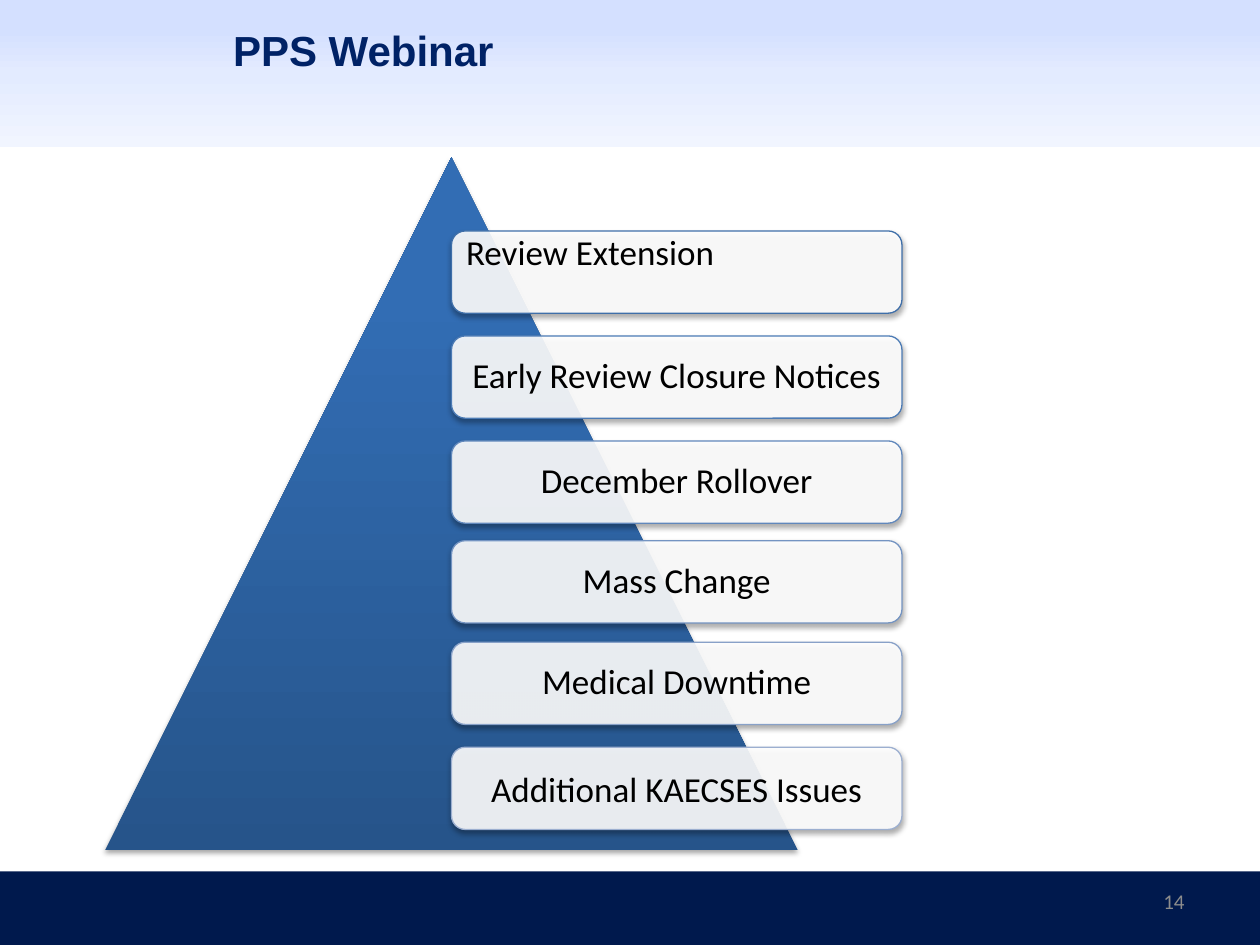
from dataclasses import dataclass

from lxml import etree
from pptx import Presentation
from pptx.dml.color import RGBColor
from pptx.enum.shapes import MSO_SHAPE
from pptx.enum.text import MSO_ANCHOR, PP_ALIGN
from pptx.oxml.ns import qn
from pptx.util import Pt

RECTANGLE = MSO_SHAPE.RECTANGLE
TRIANGLE = MSO_SHAPE.ISOSCELES_TRIANGLE
ROUNDED = MSO_SHAPE.ROUNDED_RECTANGLE
TOP, MIDDLE = MSO_ANCHOR.TOP, MSO_ANCHOR.MIDDLE
LEFT, CENTER, RIGHT = PP_ALIGN.LEFT, PP_ALIGN.CENTER, PP_ALIGN.RIGHT
TITLE_ONLY = 5


@dataclass(frozen=True)
class Theme:
    heading_font: str = "Arial"
    body_font: str = "Calibri"
    title_size: int = 24
    topic_size: int = 20
    number_size: int = 12
    title: str = "002266"
    text: str = "000000"
    number: str = "8C8C8C"
    footer: str = "00194D"
    card: str = "FFFFFF"
    shadow: str = "000000"
    header_stops: tuple = ((20, "D4E0FF"), (50, "E3EBFF"), (100, "F1F5FF"))
    pyramid_stops: tuple = ((0, "26548A"), (80, "326DB4"), (100, "306DB7"))


THEME = Theme()

# Topic, top of its card, outline colour
TOPICS = (
    ("Review Extension", 132, "3F6FA9"),
    ("Early Review Closure Notices", 192, "4C7BB5"),
    ("December Rollover", 252, "6188BC"),
    ("Mass Change", 309, "7494C2"),
    ("Medical Downtime", 367, "88A1C8"),
    ("Additional KAECSES Issues", 427, "9CAFD0"),
)
# The first topic sits at the top left of its card, the last has full line spacing
TOPIC_FORMATS = {
    0: {"frame": {"vertical_anchor": TOP, "margin_top": 0},
        "paragraph": {"alignment": LEFT}},
    len(TOPICS) - 1: {"paragraph": {"line_spacing": 1.0}},
}


def apply_format(target, values):
    for name, value in values.items():
        setattr(target, name, value)


def write_text(frame, text, frame_format, paragraph_format, font_format, color):
    apply_format(frame, {"word_wrap": True, **frame_format})
    paragraph = frame.paragraphs[0]
    apply_format(paragraph, paragraph_format)
    run = paragraph.add_run()
    run.text = text
    apply_format(run.font, font_format)
    run.font.color.rgb = RGBColor.from_string(color)


def add_plain_shape(slide, kind, box):
    shape = slide.shapes.add_shape(kind, *map(Pt, box))
    shape.shadow.inherit = False
    shape.line.fill.background()
    return shape


def fill_solid(shape, color):
    shape.fill.solid()
    shape.fill.fore_color.rgb = RGBColor.from_string(color)


def fill_gradient(shape, stops, angle):
    shape.fill.gradient()
    shape.fill.gradient_angle = angle
    stop_list = next(shape._element.spPr.iter(qn("a:gsLst")))
    for stop in list(stop_list):
        stop_list.remove(stop)
    for position, color in stops:
        stop = etree.SubElement(stop_list, qn("a:gs"), pos=str(position * 1000))
        etree.SubElement(stop, qn("a:srgbClr"), val=color)


def add_shadow(shape):
    effects = shape._element.spPr.find(qn("a:effectLst"))
    outer = etree.SubElement(
        effects, qn("a:outerShdw"), blurRad=str(Pt(3.1)), dist=str(Pt(1.8)),
        dir="5400000", rotWithShape="0")
    color = etree.SubElement(outer, qn("a:srgbClr"), val=THEME.shadow)
    etree.SubElement(color, qn("a:alpha"), val="35000")


def add_bands(slide, box):
    left, top, width, height = box
    header = add_plain_shape(slide, RECTANGLE, (left, top, width, 84))
    fill_gradient(header, THEME.header_stops, 270)
    footer = add_plain_shape(slide, RECTANGLE, (left, top + height - 42, width, 42))
    fill_solid(footer, THEME.footer)
    # Both bands lie behind the title
    for band in (header, footer):
        slide.shapes._spTree.insert(2, band._element)


def set_title(slide, box):
    title = slide.shapes.title
    apply_format(title, dict(zip(("left", "top", "width", "height"), map(Pt, box))))
    write_text(title.text_frame, "PPS Webinar", {"vertical_anchor": MIDDLE},
               {"alignment": LEFT},
               {"name": THEME.heading_font, "size": Pt(THEME.title_size), "bold": True},
               THEME.title)


def add_slide_number(slide, box):
    number = slide.shapes.add_textbox(*map(Pt, box))
    write_text(number.text_frame, "14", {"vertical_anchor": MIDDLE},
               {"alignment": RIGHT},
               {"name": THEME.body_font, "size": Pt(THEME.number_size)}, THEME.number)


def add_topic(slide, box, topic, outline, formats):
    card = add_plain_shape(slide, ROUNDED, box)
    fill_solid(card, THEME.card)
    opacity = next(card._element.spPr.iter(qn("a:srgbClr")))
    etree.SubElement(opacity, qn("a:alpha"), val="90000")
    card.line.color.rgb = RGBColor.from_string(outline)
    card.line.width = Pt(0.75)
    add_shadow(card)

    left, top, width, height = box
    inset = 2.3
    label = slide.shapes.add_textbox(
        *map(Pt, (left + inset, top + inset, width - 2 * inset, height - 2 * inset)))
    margins = {f"margin_{side}": Pt(6) for side in ("left", "top", "right", "bottom")}
    write_text(label.text_frame, topic,
               {"vertical_anchor": MIDDLE, **margins, **formats.get("frame", {})},
               {"alignment": CENTER, "line_spacing": 0.9, **formats.get("paragraph", {})},
               {"name": THEME.body_font, "size": Pt(THEME.topic_size)}, THEME.text)


def add_pyramid(slide, box):
    left, top, width, height = box
    pyramid = add_plain_shape(slide, TRIANGLE, box)
    fill_gradient(pyramid, THEME.pyramid_stops, 90)
    add_shadow(pyramid)
    # Cards start on the pyramid's axis
    for index, (topic, card_top, outline) in enumerate(TOPICS):
        card_box = (left + width / 2, card_top - 90 + top, width * 0.65, 47)
        add_topic(slide, card_box, topic, outline, TOPIC_FORMATS.get(index, {}))


def main():
    deck = Presentation()
    deck.slide_width, deck.slide_height = Pt(720), Pt(540)
    slide = deck.slides.add_slide(deck.slide_layouts[TITLE_ONLY])
    add_bands(slide, (0, 0, 720, 540))
    add_slide_number(slide, (516, 500.5, 168, 29))
    set_title(slide, (126, 6, 558, 45))
    add_pyramid(slide, (60, 90, 396, 396))
    deck.save("out.pptx")


if __name__ == "__main__":
    main()
